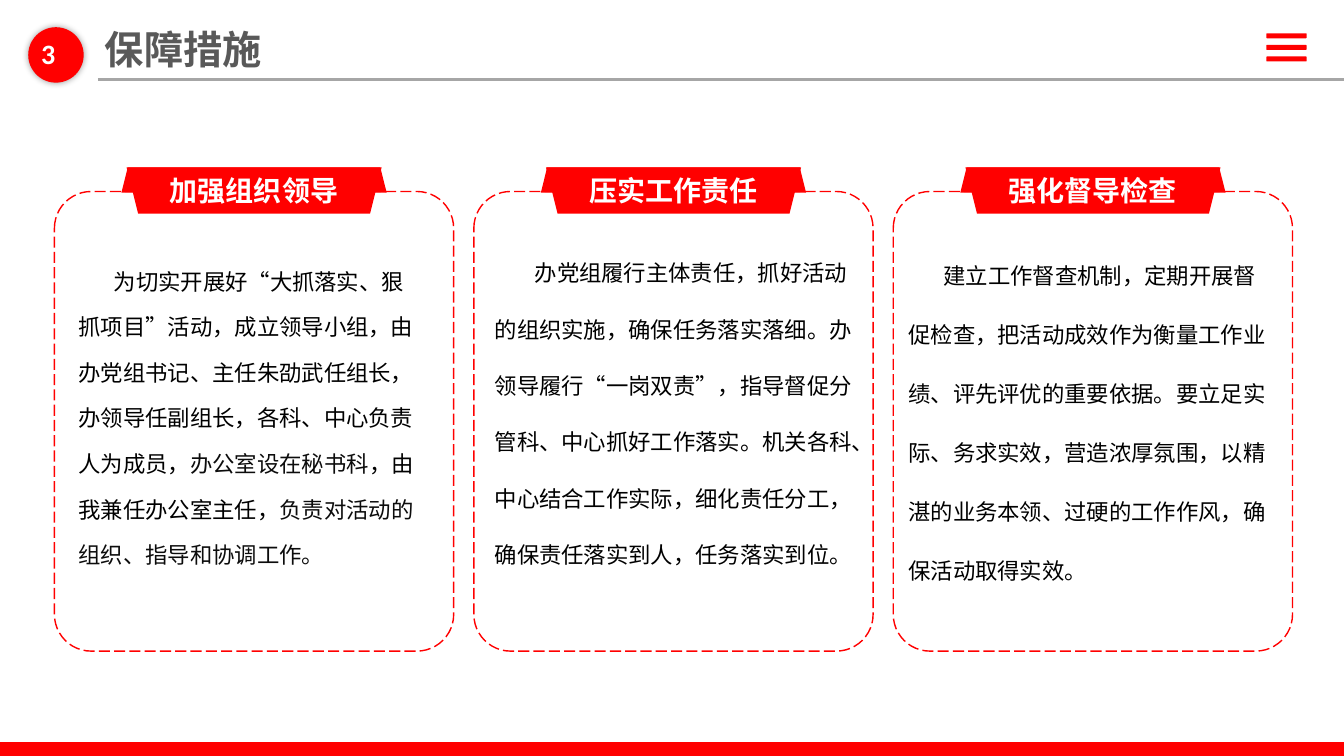
from pptx import Presentation, util as u
from pptx.dml.color import RGBColor
from pptx.enum import dml, shapes, text
from pptx.oxml import parse_xml
from pptx.oxml.ns import qn, nsdecls
from lxml import etree

TITLE, NUMBER = "保障措施", "3"
CARDS = [
    dict(head="加强组织领导", dx=0.14, top=2.42, size=(3.58, 3.3), pad=(0.1, 0.05), gap=1.7, align="l",
         body=[("为切实开展好“大抓落实、狠抓项目”活动，成立领导小组，由办党组书记、主任朱劭武任组长，"
                "办领导任副组长，各科、中心负责人为成员，", "ink"),
               ("办公室设在秘书科", "soft"),
               ("，由我兼任办公室主任，", "ink"),
               ("负责对活动的组织、指导和协调工作。", "soft")]),
    dict(head="压实工作责任", dx=0.15, top=2.28, size=(3.66, 3.39), pad=(0, 0), gap=2.1, align="c",
         body=[("办党组履行主体责任，抓好活动的组织实施，确保任务落实落细。办领导履行“一岗双责”，"
                "指导督促分管科、中心抓好工作落实。机关各科、中心结合工作实际，细化责任分工，"
                "确保责任落实到人，任务落实到位。", "ink")]),
    dict(head="强化督导检查", dx=0.15, top=2.28, size=(3.66, 3.55), pad=(0, 0), gap=2.2, align="l",
         body=[("建立工作督查机制，定期开展督促检查，把活动成效作为衡量工作业绩、评先评优的重要依据。"
                "要立足实际、务求实效，营造浓厚氛围，以精湛的业务本领、过硬的工作作风，"
                "确保活动取得实效。", "ink")]),
]
THEME = dict(
    color=dict(red="FF0000", gray="A6A6A6", title="595959", white="FFFFFF", ink="000000", soft="0C0C0C"),
    size=dict(title=28, head=20, body=16),
    font=dict(han="Noto Sans CJK SC", num="Calibri"),
)
ALIGN = dict(l=text.PP_ALIGN.LEFT, c=text.PP_ALIGN.CENTER, j=text.PP_ALIGN.JUSTIFY)
KIND = shapes.MSO_SHAPE
WIDE, HIGH = 13.33, 7.5
LEFT, PITCH, CARD = 0.54, 4.16, (3.96, 4.56)
TOP, TAB = 1.9, 1.66

deck = Presentation()
deck.slide_width, deck.slide_height = u.Inches(WIDE), u.Inches(HIGH)
slide = deck.slides.add_slide(deck.slide_layouts[5])


def tone(name):
    return RGBColor.from_string(THEME["color"][name])


def place(box):
    return [u.Inches(v) for v in box]


def draw(kind, box, fill=None, line=None):
    item = slide.shapes.add_shape(kind, *place(box))
    item.shadow.inherit = False
    if fill:
        item.fill.solid()
        item.fill.fore_color.rgb = tone(fill)
    else:
        item.fill.background()
    if line:
        item.line.color.rgb = tone(line)
        item.line.width = u.Pt(1)
    else:
        item.line.fill.background()
    return item


def write(runs, box, size, font="han", bold=False, align="l", gap=None, pad=(0.1, 0.05), indent=0, item=None):
    item = item or slide.shapes.add_textbox(*place(box))
    item.left, item.top, item.width, item.height = place(box)
    frame = item.text_frame
    frame.word_wrap = True
    frame.auto_size = text.MSO_AUTO_SIZE.NONE
    frame.vertical_anchor = text.MSO_ANCHOR.TOP
    frame.margin_left = frame.margin_right = u.Inches(pad[0])
    frame.margin_top = frame.margin_bottom = u.Inches(pad[1])
    para = frame.paragraphs[0]
    para.alignment = ALIGN[align]
    if gap:
        para.line_spacing = gap
    if indent:
        para._p.get_or_add_pPr().set("indent", str(u.Inches(indent)))
    for words, color in runs:
        run = para.add_run()
        run.text = words
        run.font.size = u.Pt(THEME["size"][size])
        run.font.bold = bold
        run.font.color.rgb = tone(color)
        run.font.name = THEME["font"][font]
        east = etree.SubElement(run._r.get_or_add_rPr(), qn("a:ea"))
        east.set("typeface", THEME["font"][font])


def header():
    for row in range(3):
        draw(KIND.ROUNDED_RECTANGLE, (12.56, 0.33 + row * 0.115, 0.4, 0.05), "red")
    rule = slide.shapes.add_connector(shapes.MSO_CONNECTOR.STRAIGHT, *place((0.97, 0.79, WIDE, 0.79)))
    rule.line.color.rgb = tone("gray")
    rule.line.width = u.Pt(1.75)
    etree.SubElement(rule._element.spPr, qn("a:effectLst"))
    draw(KIND.RECTANGLE, (0, 7.37, WIDE, 0.13), "red", "red")
    write([(TITLE, "title")], (0.94, 0.2, 4.89, 0.57), "title", bold=True, item=slide.shapes.title)
    disc = draw(KIND.OVAL, (0.28, 0.27, 0.55, 0.55), "red")
    glow = parse_xml(
        f'<a:outerShdw {nsdecls("a")} blurRad="{u.Pt(5)}" dist="0" dir="0" algn="ctr" rotWithShape="0">'
        '<a:srgbClr val="000000"><a:alpha val="40000"/></a:srgbClr></a:outerShdw>')
    disc._element.spPr.find(qn("a:effectLst")).append(glow)
    write([(NUMBER, "white")], (0.31, 0.31, 0.49, 0.44), "head", font="num", bold=True, align="j")


def card(col, data):
    x = LEFT + col * PITCH
    edge = draw(KIND.ROUNDED_RECTANGLE, (x, TOP, *CARD), line="red")
    edge.adjustments[0] = 0.092
    edge.line.dash_style = dml.MSO_LINE.LONG_DASH
    mid = x + CARD[0] / 2
    for wide, high, turn in ((2.63, 0.25, 0), (2.53, 0.46, 180)):
        draw(KIND.TRAPEZOID, (mid - wide / 2, TAB, wide, high), "red").rotation = turn
    write([(data["head"], "white")], (mid - 0.95, TAB + 0.01, 1.9, 0.44), "head", bold=True, align="c")
    write(data["body"], (x + data["dx"], data["top"], *data["size"]), "body",
          align=data["align"], gap=data["gap"], pad=data["pad"], indent=0.35)


header()
for col, data in enumerate(CARDS):
    card(col, data)
deck.save("out.pptx")
